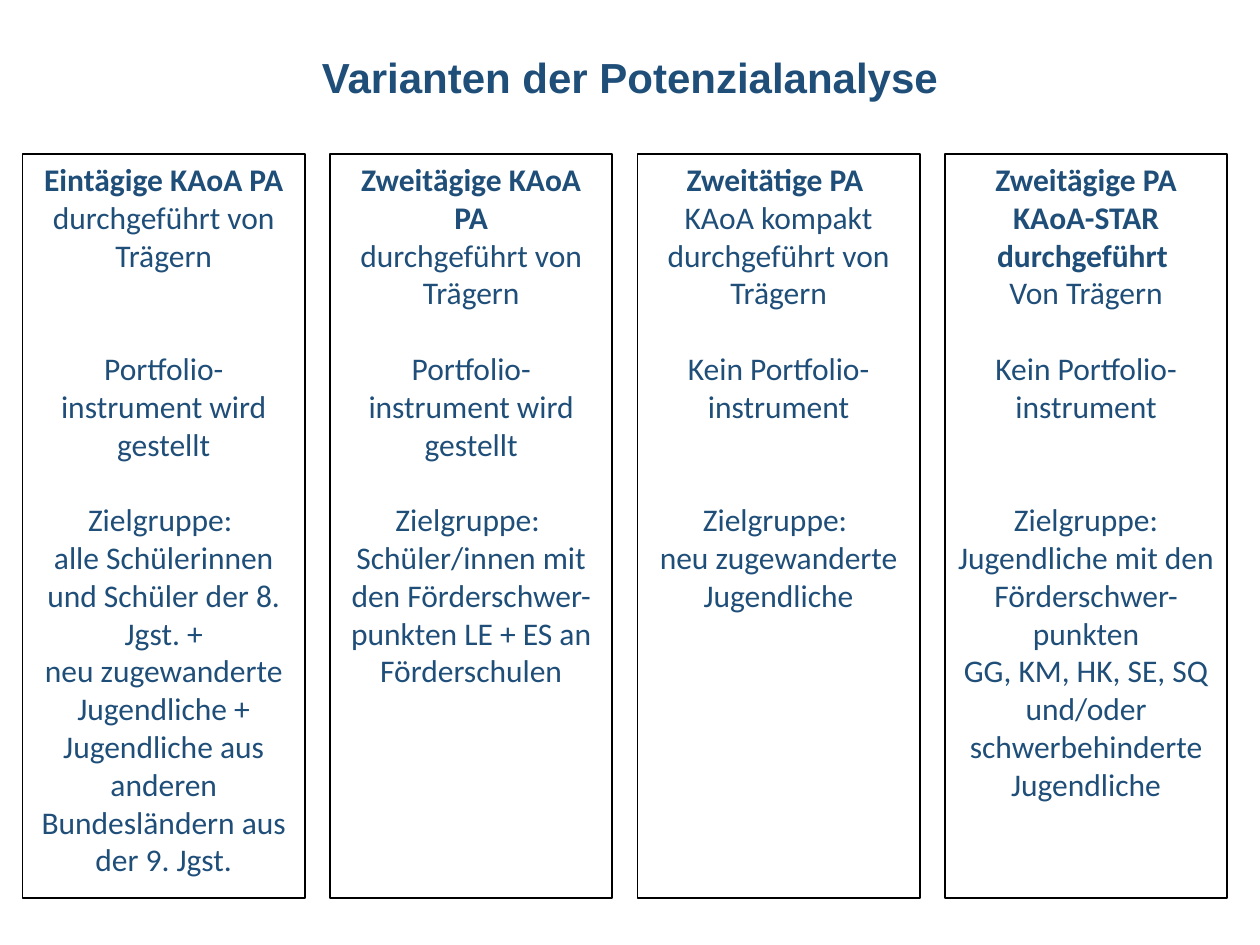
"""Build a slide comparing four variants of the Potenzialanalyse."""
import pptx
import pptx.dml.color
import pptx.enum.shapes
import pptx.enum.text
import pptx.util

Inches = pptx.util.Inches
Pt = pptx.util.Pt
NAVY = pptx.dml.color.RGBColor(0x1F, 0x4E, 0x79)
BLACK = pptx.dml.color.RGBColor(0, 0, 0)
LINE_HEIGHT = 21.6

VARIANTS = [
    {
        "head": ["Eintägige KAoA PA"],
        "provider": ["durchgeführt von Trägern"],
        "portfolio": "Portfolio-instrument wird gestellt",
        "gaps": (2, 1),
        "target": [
            "Zielgruppe: ",
            "alle Schülerinnen und Schüler der 8. Jgst. +",
            "neu zugewanderte Jugendliche + Jugendliche aus anderen Bundesländern aus der 9. Jgst.",
        ],
    },
    {
        "head": ["Zweitägige KAoA PA"],
        "provider": ["durchgeführt von Trägern"],
        "portfolio": "Portfolio-instrument wird gestellt",
        "gaps": (1, 1),
        "target": [
            "Zielgruppe: ",
            "Schüler/innen mit den Förderschwer-punkten LE + ES an Förderschulen",
        ],
    },
    {
        "head": ["Zweitätige PA "],
        "provider": ["KAoA kompakt", "durchgeführt von Trägern"],
        "portfolio": "Kein Portfolio-instrument",
        "gaps": (1, 2),
        "target": ["Zielgruppe: ", "neu zugewanderte Jugendliche"],
    },
    {
        "head": ["Zweitägige PA", "KAoA-STAR", "durchgeführt "],
        "provider": ["Von Trägern"],
        "portfolio": "Kein Portfolio-instrument",
        "gaps": (1, 2),
        "target": [
            "Zielgruppe:",
            "Jugendliche mit den Förderschwer-punkten",
            "GG, KM, HK, SE, SQ und/oder schwerbehinderte Jugendliche",
        ],
    },
]


def add_text(tf, text, size=18, font="Calibri", bold=False, gap=0):
    p = tf.paragraphs[0] if not tf.text else tf.add_paragraph()
    p.alignment = pptx.enum.text.PP_ALIGN.CENTER
    p.space_before = Pt(gap * LINE_HEIGHT)
    r = p.add_run()
    r.text = text
    r.font.size = Pt(size)
    r.font.name = font
    r.font.bold = bold
    r.font.color.rgb = NAVY


prs = pptx.Presentation()
prs.slide_width = Inches(10)
prs.slide_height = Inches(7.5)
s = prs.slides.add_slide(prs.slide_layouts[6])

title = s.shapes.add_textbox(Inches(0), Inches(0.36), Inches(10), Inches(0.5))
title.text_frame.word_wrap = True
add_text(title.text_frame, "Varianten der Potenzialanalyse", size=24, font="Arial", bold=True)

for i, variant in enumerate(VARIANTS):
    sp = s.shapes.add_shape(
        pptx.enum.shapes.MSO_SHAPE.RECTANGLE,
        Inches(0.18 + 2.44 * i), Inches(1.22), Inches(2.24), Inches(5.91),
    )
    sp.shadow.inherit = False
    sp.fill.background()
    sp.line.color.rgb = BLACK
    sp.line.width = Pt(1)
    tf = sp.text_frame
    tf.word_wrap = True
    tf.vertical_anchor = pptx.enum.text.MSO_ANCHOR.TOP
    portfolio_gap, target_gap = variant["gaps"]
    for text in variant["head"]:
        add_text(tf, text, bold=True)
    for text in variant["provider"]:
        add_text(tf, text)
    add_text(tf, variant["portfolio"], gap=portfolio_gap)
    for n, text in enumerate(variant["target"]):
        add_text(tf, text, gap=0 if n else target_gap)

prs.save("out.pptx")
